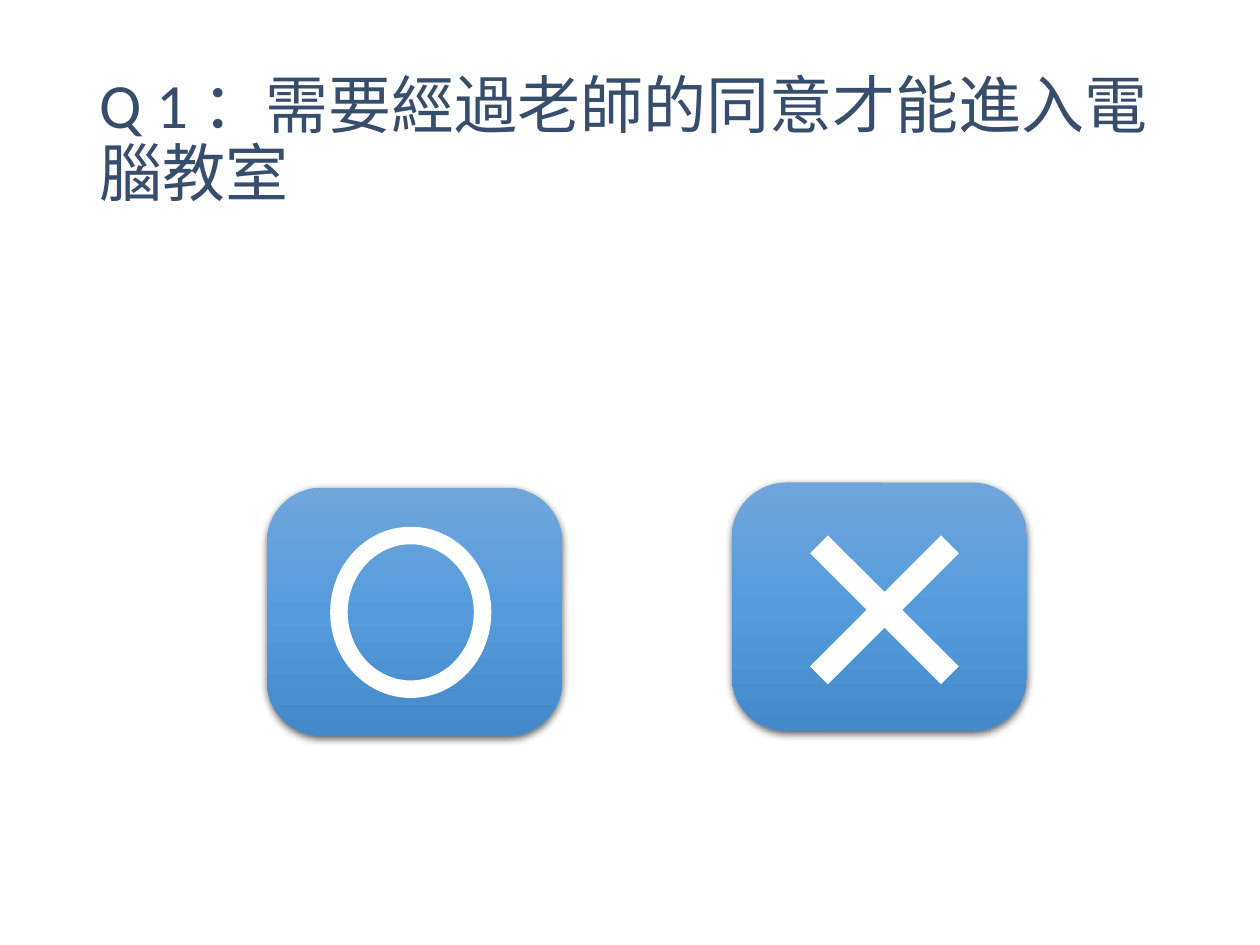
from copy import deepcopy
from dataclasses import dataclass

from lxml.etree import SubElement
from pptx import Presentation
from pptx.dml.color import RGBColor as RGB
from pptx.enum.shapes import MSO_SHAPE as SHAPE
from pptx.enum.text import MSO_ANCHOR as ANCHOR, PP_ALIGN as ALIGN
from pptx.oxml.ns import qn
from pptx.util import Inches, Pt

W, H = Inches(10), Inches(7.5)


@dataclass(frozen=True)
class Theme:
    """Colours, font and sizes of the quiz slide."""
    font: str = "Calibri"
    title_size: int = 36
    title: str = "374D6C"
    symbol: str = "FFFFFF"
    shadow: str = "000000"
    button: tuple = ("71A6DB", "559BDB", "448ACA")
    ring_width: int = 10


@dataclass(frozen=True)
class Box:
    """A rectangle in shares of the slide's width and height."""
    x: float
    y: float
    w: float
    h: float

    def emu(self) -> tuple:
        """Return left, top, width and height in EMU."""
        return tuple(round(v) for v in (self.x * W, self.y * H, self.w * W, self.h * H))


def inches(x: float, y: float, w: float, h: float) -> Box:
    """Make a box from lengths on the 10 by 7.5 inch grid."""
    return Box(x / 10, y / 7.5, w / 10, h / 7.5)


THEME = Theme()
TITLE = inches(0.69, 0.4, 8.62, 1.45)
BUTTONS = {"X": inches(5.81, 3.83, 2.34, 1.97), "O": inches(2.12, 3.87, 2.34, 1.97)}
RING = inches(2.69, 4.25, 1.14, 1.22)
CROSS = inches(6.02, 3.84, 2, 2)


def write(tf, text: str, *, size: int, color: str, font: str, spacing: float = 1.0) -> None:
    """Put formatted, left-aligned text in a frame."""
    p = tf.paragraphs[0]
    p.alignment, p.line_spacing = ALIGN.LEFT, spacing
    r = p.add_run()
    r.text = text
    r.font.name, r.font.size = font, Pt(size)
    r.font.color.rgb = RGB.from_string(color)


def add_plain(s, kind: SHAPE, box: Box):
    """Add a shape with no line and no shadow."""
    sp = s.shapes.add_shape(kind, *box.emu())
    sp.shadow.inherit = False
    sp.line.fill.background()
    return sp


def add_button(s, box: Box) -> None:
    """Add a rounded button with a vertical gradient and a soft shadow."""
    sp = add_plain(s, SHAPE.ROUNDED_RECTANGLE, box)
    sp.adjustments[0] = 0.22
    sp.fill.gradient()
    sp.fill.gradient_angle = 270
    gs_list = sp._element.spPr.find(".//" + qn("a:gsLst"))
    gs_list.insert(1, deepcopy(gs_list[0]))
    gs_list[1].set("pos", "50000")
    for stop, color in zip(sp.fill.gradient_stops, THEME.button):
        stop.color.rgb = RGB.from_string(color)
    effects = sp._element.spPr.find(qn("a:effectLst"))
    shadow = SubElement(effects, qn("a:outerShdw"), blurRad=str(Pt(4.5)),
                        dist=str(Pt(1.5)), dir="5400000", algn="ctr", rotWithShape="0")
    color = SubElement(shadow, qn("a:srgbClr"), val=THEME.shadow)
    SubElement(color, qn("a:alpha"), val="63000")


def add_ring(s, box: Box) -> None:
    """Add the hollow circle that means yes."""
    sp = add_plain(s, SHAPE.OVAL, box)
    sp.fill.background()
    sp.line.color.rgb = RGB.from_string(THEME.symbol)
    sp.line.width = Pt(THEME.ring_width)


def add_cross(s, box: Box) -> None:
    """Add the cross that means no."""
    sp = add_plain(s, SHAPE.MATH_MULTIPLY, box)
    sp.adjustments[0] = 0.1
    sp.fill.solid()
    sp.fill.fore_color.rgb = RGB.from_string(THEME.symbol)


def add_title(s, text: str) -> None:
    """Place and format the title placeholder."""
    sp = s.shapes.title
    sp.left, sp.top, sp.width, sp.height = TITLE.emu()
    tf = sp.text_frame
    tf.word_wrap, tf.vertical_anchor = True, ANCHOR.MIDDLE
    write(tf, text, size=THEME.title_size, color=THEME.title, font=THEME.font, spacing=0.9)


def main() -> None:
    """Build the quiz slide and save it."""
    prs = Presentation()
    prs.slide_width, prs.slide_height = W, H
    s = prs.slides.add_slide(prs.slide_layouts[5])
    add_title(s, "Q 1 ：需要經過老師的同意才能進入電腦教室")
    for box in BUTTONS.values():
        add_button(s, box)
    add_ring(s, RING)
    add_cross(s, CROSS)
    prs.save("out.pptx")


if __name__ == "__main__":
    main()
